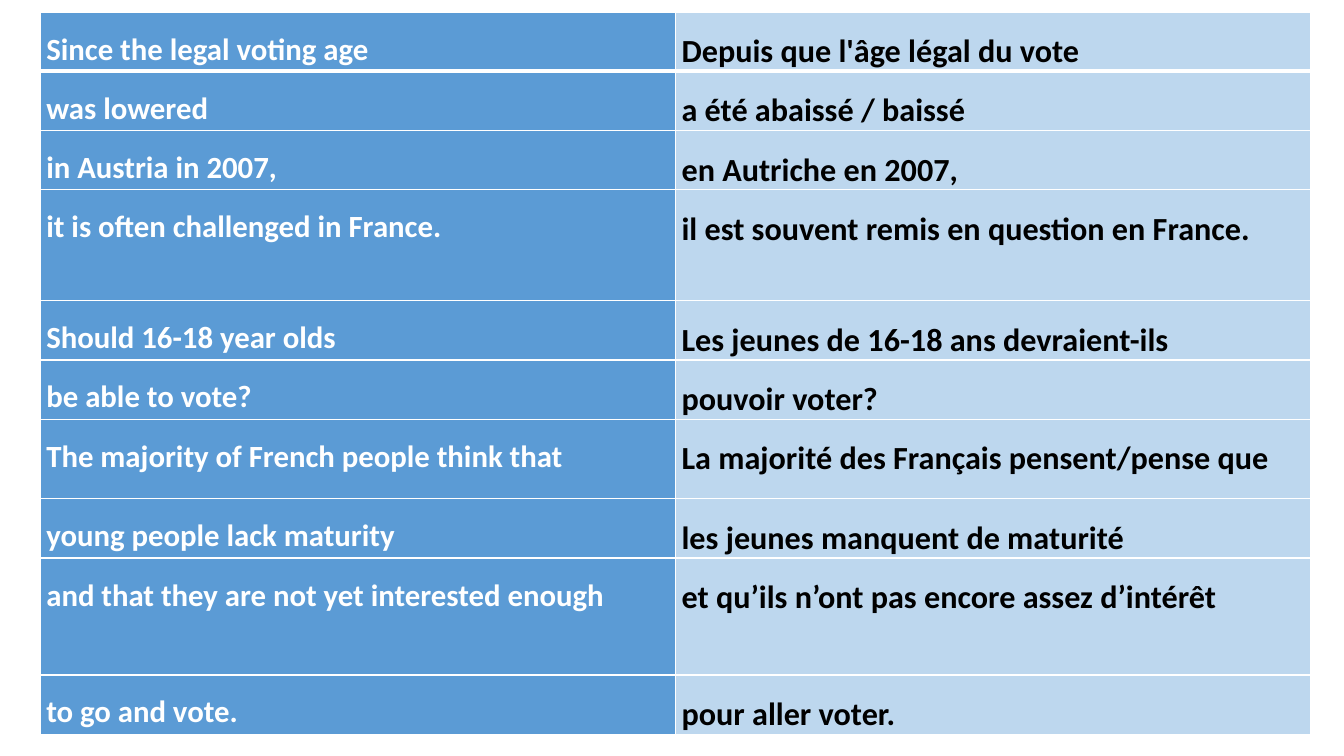
from lxml.etree import SubElement
from pptx import Presentation
from pptx.dml.color import RGBColor
from pptx.oxml.ns import qn
from pptx.util import Inches, Pt

ROWS = [  # English, French, row height
    ("Since the legal voting age", "Depuis que l'âge légal du vote", 0.58),
    ("was lowered", "a été abaissé / baissé", 0.58),
    ("in Austria in 2007,", "en Autriche en 2007,", 0.58),
    ("it is often challenged in France.",
     "il est souvent remis en question en France.", 1.1),
    ("Should 16-18 year olds", "Les jeunes de 16-18 ans devraient-ils", 0.58),
    ("be able to vote?", "pouvoir voter?", 0.58),
    ("The majority of French people think that",
     "La majorité des Français pensent/pense que", 0.79),
    ("young people lack maturity", "les jeunes manquent de maturité", 0.58),
    ("and that they are not yet interested enough",
     "et qu’ils n’ont pas encore assez d’intérêt", 1.16),
    ("to go and vote.", "pour aller voter.", 0.58),
]
COLORS = {"blue": "5B9BD5", "pale": "BDD7EE", "white": "FFFFFF", "black": "000000"}
STYLES = [("blue", "white", 22), ("pale", "black", 23)]  # fill, text, size
LEFT, TOP, WIDTH = 0.4, 0.12, 6.3


def rgb(name):
    return RGBColor.from_string(COLORS[name])


def add_borders(cell, row):
    """White rules, thicker between the first row and the second."""
    widths = {"L": 1, "R": 1, "T": 3 if row == 1 else 1, "B": 3 if row == 0 else 1}
    props = cell._tc.get_or_add_tcPr()
    for side, width in widths.items():
        line = SubElement(props, qn(f"a:ln{side}"), w=str(Pt(width)))
        fill = SubElement(line, qn("a:solidFill"))
        SubElement(fill, qn("a:srgbClr"), val=COLORS["white"])


def fill_cell(cell, text, style):
    back, ink, size = style
    cell.fill.solid()
    cell.fill.fore_color.rgb = rgb(back)
    cell.margin_left = cell.margin_right = Inches(0.06)
    cell.margin_top = cell.margin_bottom = 0
    cell.text = text
    para = cell.text_frame.paragraphs[0]
    para.line_spacing = 1.5
    font = para.font
    font.name, font.size, font.bold = "Calibri", Pt(size), True
    font.color.rgb = rgb(ink)


def main():
    prs = Presentation()
    prs.slide_width, prs.slide_height = Inches(13.33), Inches(7.5)
    slide = prs.slides.add_slide(prs.slide_layouts[6])
    height = sum(row[2] for row in ROWS)
    table = slide.shapes.add_table(
        len(ROWS), len(STYLES), Inches(LEFT), Inches(TOP),
        Inches(WIDTH * len(STYLES)), Inches(height)).table
    for column in table.columns:
        column.width = Inches(WIDTH)
    for r, (*texts, tall) in enumerate(ROWS):
        table.rows[r].height = Inches(tall)
        for c, (text, style) in enumerate(zip(texts, STYLES)):
            cell = table.cell(r, c)
            add_borders(cell, r)
            fill_cell(cell, text, style)
    prs.save("out.pptx")


if __name__ == "__main__":
    main()
